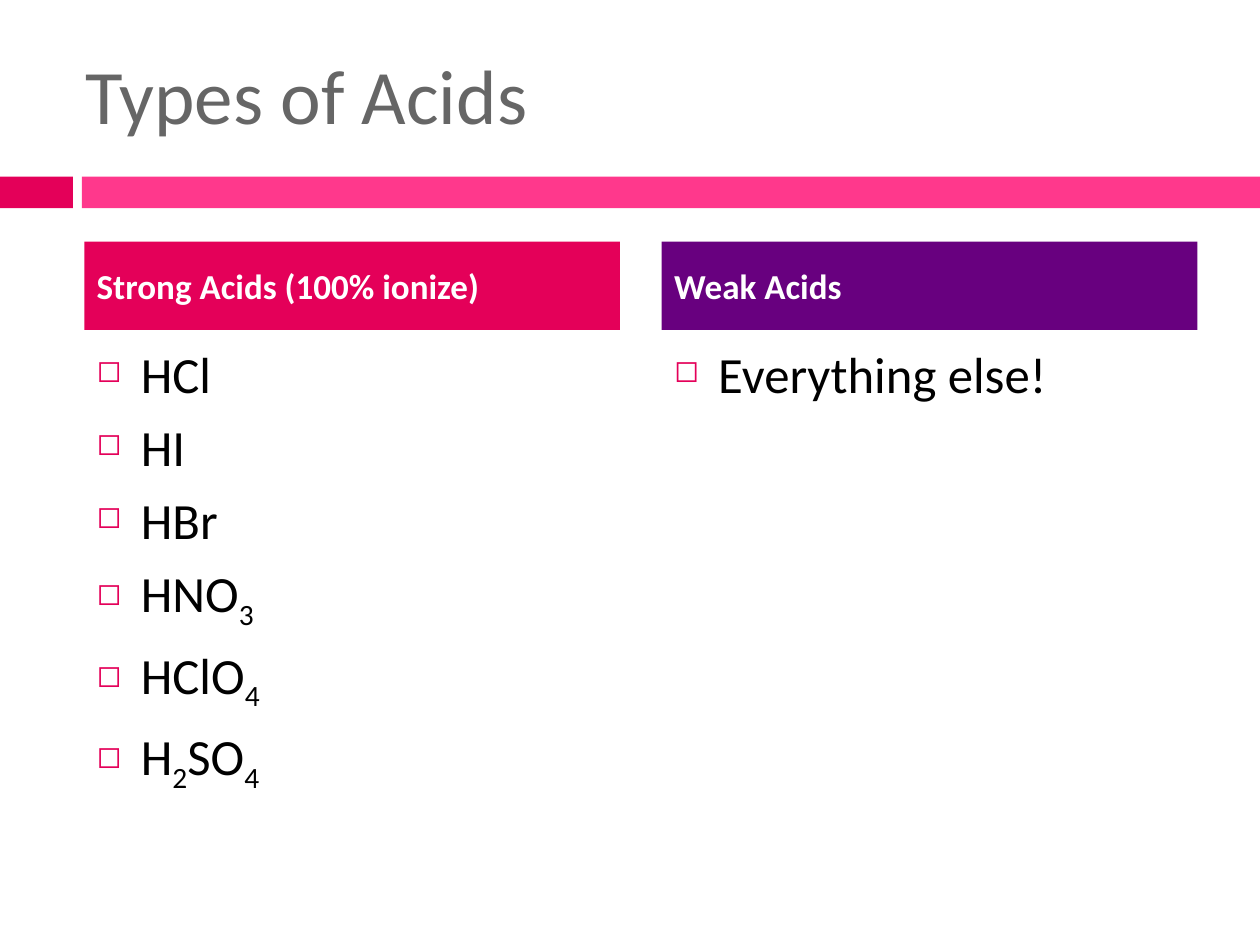
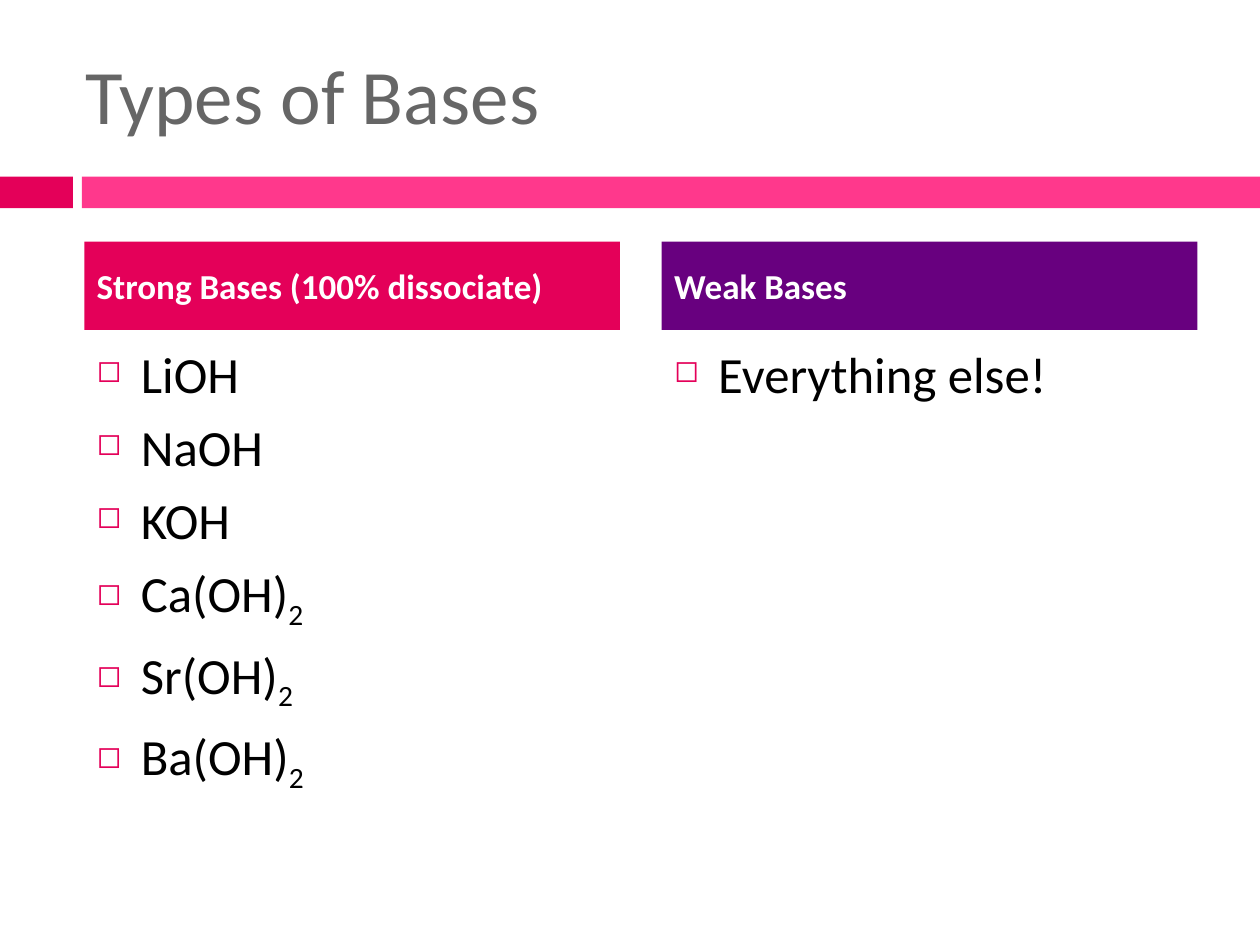
from itertools import groupby

from lxml.etree import SubElement
from pptx import Presentation
from pptx.dml.color import RGBColor
from pptx.enum.shapes import MSO_SHAPE
from pptx.enum.text import MSO_ANCHOR, PP_ALIGN
from pptx.oxml.ns import qn
from pptx.util import Cm, Pt

WIDTH, HEIGHT = 25.4, 19.05
ROSE, PINK, PURPLE = "E40059", "FF388C", "68007F"
GREY, BLACK, WHITE = "666666", "000000", "FFFFFF"

TITLE = {"size": Pt(44), "bold": False}
HEAD = {"size": Pt(20), "bold": True}
ITEM = {"size": Pt(29), "bold": False}

TITLE_BOX = (1.47, 0.76, 22.66, 2.27)
BAND_TOP, BAND_HIGH = 3.56, 0.64
SIDE, GAP = 1.47, 0.18
LEFT, STEP, TOP = 1.7, 11.64, 4.87
COL_WIDE, COL_HIGH = 10.8, 11.86
HEAD_HIGH, HEAD_GAP = 1.78, 0.13

SLIDES = [
    ("Types of Acids", [
        ("Strong Acids (100% ionize)", ROSE,
         ["HCl", "HI", "HBr", "HNO3", "HClO4", "H2SO4"]),
        ("Weak Acids", PURPLE, ["Everything else!"]),
    ]),
    ("Types of Bases", [
        ("Strong Bases (100% dissociate)", ROSE,
         ["LiOH", "NaOH", "KOH", "Ca(OH)2", "Sr(OH)2", "Ba(OH)2"]),
        ("Weak Bases", PURPLE, ["Everything else!"]),
    ]),
]


def paint(color, value):
    """Give a fill or font colour the hex value."""
    color.rgb = RGBColor.from_string(value)


def style(font, form, color):
    for name, value in {"name": "Calibri", **form}.items():
        setattr(font, name, value)
    paint(font.color, color)


def add_bar(slide, box, color):
    """Add a plain filled rectangle without line or shadow."""
    bar = slide.shapes.add_shape(MSO_SHAPE.RECTANGLE, *map(Cm, box))
    bar.shadow.inherit = False
    bar.fill.solid()
    paint(bar.fill.fore_color, color)
    bar.line.fill.background()
    return bar


def add_text(para, text, form, color):
    run = para.add_run()
    run.text = text
    style(run.font, form, color)
    return run


def add_title(slide, text, box):
    title = slide.shapes.title
    for name, value in zip(("left", "top", "width", "height"), box):
        setattr(title, name, Cm(value))
    frame = title.text_frame
    frame.vertical_anchor = MSO_ANCHOR.MIDDLE
    para = frame.paragraphs[0]
    para.alignment = PP_ALIGN.LEFT
    add_text(para, text, TITLE, GREY)


def add_bands(slide, top, high):
    start = SIDE + GAP
    add_bar(slide, (0, top, SIDE, high), ROSE)
    add_bar(slide, (start, top, WIDTH - start, high), PINK)


def add_head(slide, text, color, box):
    frame = add_bar(slide, box, color).text_frame
    frame.word_wrap = True
    frame.vertical_anchor = MSO_ANCHOR.MIDDLE
    para = frame.paragraphs[0]
    para.alignment = PP_ALIGN.LEFT
    para.space_before = Pt(7)
    add_text(para, text, HEAD, WHITE)


def add_bullet(para):
    """Hang a small rose square in front of the paragraph."""
    para.space_before = Pt(7)
    props = para._p.get_or_add_pPr()
    props.set("marL", str(Cm(0.89)))
    props.set("indent", str(-Cm(0.89)))
    tint = SubElement(props, qn("a:buClr"))
    SubElement(tint, qn("a:srgbClr"), val=ROSE)
    SubElement(props, qn("a:buSzPct"), val="60000")
    SubElement(props, qn("a:buChar"), char="◻")


def add_list(slide, items, box):
    """List the items, with the digits of each formula as subscripts."""
    frame = slide.shapes.add_textbox(*map(Cm, box)).text_frame
    frame.word_wrap = True
    for index, item in enumerate(items):
        para = frame.add_paragraph() if index else frame.paragraphs[0]
        add_bullet(para)
        for low, chars in groupby(item, str.isdigit):
            run = add_text(para, "".join(chars), ITEM, BLACK)
            if low:
                run.font._element.set("baseline", "-25000")


def add_column(slide, head, color, items, box):
    left, top, wide, high = box
    drop = HEAD_HIGH + HEAD_GAP
    add_list(slide, items, (left, top + drop, wide, high - drop))
    add_head(slide, head, color, (left, top, wide, HEAD_HIGH))


def add_slide(deck, title, columns):
    slide = deck.slides.add_slide(deck.slide_layouts[5])
    add_bands(slide, BAND_TOP, BAND_HIGH)
    add_title(slide, title, TITLE_BOX)
    for index, column in enumerate(columns):
        box = (LEFT + index * STEP, TOP, COL_WIDE, COL_HIGH)
        add_column(slide, *column, box)


def main():
    deck = Presentation()
    deck.slide_width, deck.slide_height = Cm(WIDTH), Cm(HEIGHT)
    for title, columns in SLIDES:
        add_slide(deck, title, columns)
    deck.save("out.pptx")


if __name__ == "__main__":
    main()
